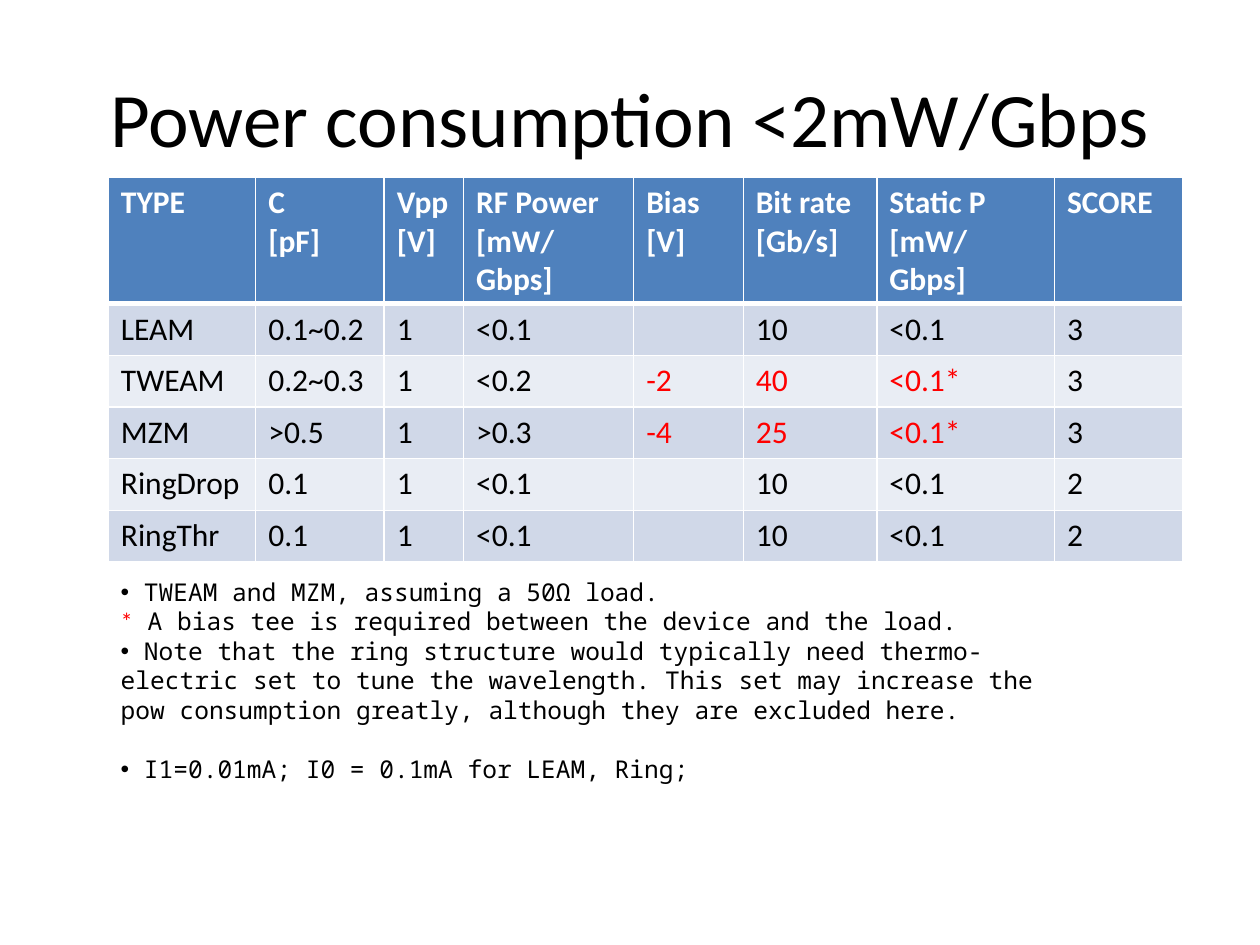
from lxml import etree
from pptx import Presentation
from pptx.dml.color import RGBColor
from pptx.enum.text import MSO_ANCHOR, PP_ALIGN
from pptx.oxml.ns import qn
from pptx.util import Inches, Pt

CENTER = PP_ALIGN.CENTER
MIDDLE = MSO_ANCHOR.MIDDLE

THEME = {
    "sans": "Calibri", "mono": "Noto Sans Mono", "bullet": "Arial",
    "text": "000000", "accent": "FF0000", "light": "FFFFFF",
    "header": "4F81BD", "bands": ("D0D8E8", "E9EDF4"),
    "title_size": 44, "table_size": 18, "note_size": 14,
    "rule": 1, "header_rule": 3, "note_gap": 17,
}

TITLE = "Power consumption <2mW/Gbps"
COLUMNS = [
    (["TYPE"], 1.17), (["C", "[pF]"], 1.02), (["Vpp", "[V]"], 0.63),
    (["RF Power", "[mW/Gbps]"], 1.35), (["Bias", "[V]"], 0.87),
    (["Bit rate", "[Gb/s]"], 1.06), (["Static P", "[mW/Gbps]"], 1.41),
    (["SCORE"], 1.02),
]
DEVICES = [
    ["LEAM", "0.1~0.2", "1", "<0.1", "", "10", "<0.1", "3"],
    ["TWEAM", "0.2~0.3", "1", "<0.2", "-2", "40", "<0.1*", "3"],
    ["MZM", ">0.5", "1", ">0.3", "-4", "25", "<0.1*", "3"],
    ["RingDrop", "0.1", "1", "<0.1", "", "10", "<0.1", "2"],
    ["RingThr", "0.1", "1", "<0.1", "", "10", "<0.1", "2"],
]
BIASED = {"TWEAM", "MZM"}
BIAS_COLUMNS = {4, 5, 6}
NOTES = [
    ("•", " TWEAM and MZM, assuming a 50Ω load.", 0),
    ("*", " A bias tee is required between the device and the load.", 0),
    ("•", " Note that the ring structure would typically need thermo-electric "
     "set to tune the wavelength. This set may increase the pow consumption "
     "greatly, although they are excluded here.", THEME["note_gap"]),
    ("•", " I1=0.01mA; I0 = 0.1mA for LEAM, Ring;", 0),
]
LEFT, TABLE_TOP, NOTES_TOP, ROW_HEIGHT = 0.86, 1.41, 4.53, 0.41


def add_text(p, text, size, font=THEME["sans"], color=THEME["text"], bold=False):
    r = p.add_run()
    r.text = text
    r.font.size = Pt(size)
    r.font.name = font
    r.font.bold = bold
    r.font.color.rgb = RGBColor.from_string(color)


def add_box(s, left, top, width, height):
    tf = s.shapes.add_textbox(*map(Inches, (left, top, width, height))).text_frame
    tf.word_wrap = True
    return tf


def next_paragraph(tf, index):
    return tf.add_paragraph() if index else tf.paragraphs[0]


def set_bullet(p, char):
    pPr = p._p.get_or_add_pPr()
    etree.SubElement(pPr, qn("a:buFont"), typeface=THEME["bullet"])
    etree.SubElement(pPr, qn("a:buChar"), char=char)


def style_cell(cell, fill, **widths):
    cell.fill.solid()
    cell.fill.fore_color.rgb = RGBColor.from_string(fill)
    tcPr = cell._tc.get_or_add_tcPr()
    for i, side in enumerate(("lnL", "lnR", "lnT", "lnB")):
        width = widths.get(side, THEME["rule"])
        ln = etree.Element(qn(f"a:{side}"), w=str(Pt(width)))
        solid = etree.SubElement(ln, qn("a:solidFill"))
        etree.SubElement(solid, qn("a:srgbClr"), val=THEME["light"])
        tcPr.insert(i, ln)


def add_device_table(s):
    rows = len(DEVICES) + 1
    width = sum(w for _, w in COLUMNS)
    table = s.shapes.add_table(
        rows, len(COLUMNS), Inches(LEFT), Inches(TABLE_TOP),
        Inches(width), Inches(rows * ROW_HEIGHT)).table
    for row in table.rows:
        row.height = Inches(ROW_HEIGHT)

    for c, (lines, width) in enumerate(COLUMNS):
        table.columns[c].width = Inches(width)
        cell = table.cell(0, c)
        style_cell(cell, THEME["header"], lnB=THEME["header_rule"])
        for i, line in enumerate(lines):
            add_text(next_paragraph(cell.text_frame, i), line,
                     THEME["table_size"], color=THEME["light"], bold=True)

    for r, values in enumerate(DEVICES, 1):
        top = THEME["header_rule"] if r == 1 else THEME["rule"]
        for c, value in enumerate(values):
            cell = table.cell(r, c)
            style_cell(cell, THEME["bands"][(r - 1) % 2], lnT=top)
            red = values[0] in BIASED and c in BIAS_COLUMNS
            if value:
                add_text(cell.text_frame.paragraphs[0], value, THEME["table_size"],
                         color=THEME["accent" if red else "text"])


def add_notes(s):
    tf = add_box(s, LEFT, NOTES_TOP, 7.58, 1.75)
    for i, (mark, text, gap) in enumerate(NOTES):
        p = next_paragraph(tf, i)
        p.space_after = Pt(gap)
        if mark == "*":
            add_text(p, mark, THEME["note_size"], color=THEME["accent"])
        else:
            set_bullet(p, mark)
        add_text(p, text, THEME["note_size"], font=THEME["mono"])


def main():
    prs = Presentation()
    prs.slide_width, prs.slide_height = Inches(10), Inches(7.5)
    s = prs.slides.add_slide(prs.slide_layouts[6])
    tf = add_box(s, 0.5, 0.3, 9, 1.25)
    tf.vertical_anchor = MIDDLE
    p = tf.paragraphs[0]
    p.alignment = CENTER
    add_text(p, TITLE, THEME["title_size"])
    add_device_table(s)
    add_notes(s)
    prs.save("out.pptx")


if __name__ == "__main__":
    main()
